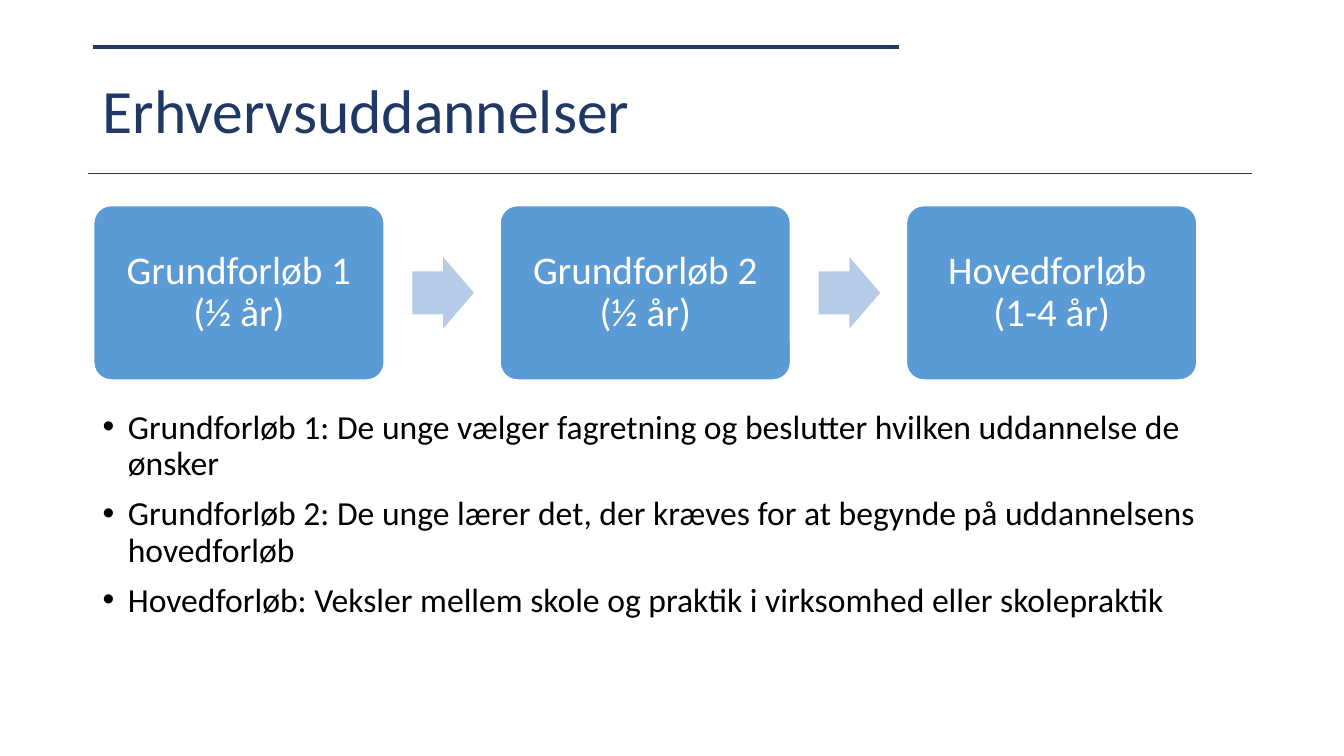
from pptx import Presentation
from pptx.dml.color import RGBColor
from pptx.enum.shapes import MSO_CONNECTOR, MSO_SHAPE
from pptx.enum.text import MSO_ANCHOR, PP_ALIGN
from pptx.oxml.ns import qn
from pptx.util import Inches, Pt
from lxml import etree

# Content
TITLE = "Erhvervsuddannelser"
STEPS = ["Grundforløb 1 (½ år)", "Grundforløb 2 (½ år)", "Hovedforløb \v(1-4 år)"]
BULLETS = [
    "Grundforløb 1: De unge vælger fagretning og beslutter hvilken uddannelse de ønsker",
    "Grundforløb 2: De unge lærer det, der kræves for at begynde på uddannelsens hovedforløb",
    "Hovedforløb: Veksler mellem skole og praktik i virksomhed eller skolepraktik",
]
RULES = [(0.92, 8.92, 0.47, 3), (0.87, 12.42, 1.72, 0.25)]  # left, right, y, points

THEME = {
    "font": "Calibri",
    "navy": RGBColor(0x20, 0x38, 0x64),
    "box": RGBColor(0x5B, 0x9B, 0xD5),
    "arrow": RGBColor(0xB5, 0xCB, 0xE7),
    "white": RGBColor(0xFF, 0xFF, 0xFF),
    "black": RGBColor(0, 0, 0),
    "title": 44, "step": 28, "body": 24,
}

# Layout in inches
LEFT, WIDTH = 0.92, 11.5
STEP_X, STEP_Y, STEP_W, STEP_H, PITCH = 0.93, 2.04, 2.88, 1.73, 4.03
ARROW_W, ARROW_H, ARROW_GAP = 0.61, 0.71, 0.28
STEP_INSET = 0.17

prs = Presentation()
prs.slide_width, prs.slide_height = Inches(13.33), Inches(7.5)
s = prs.slides.add_slide(prs.slide_layouts[6])


def add_text(p, text, size, color):
    p.line_spacing = 0.9
    for i, part in enumerate(text.split("\v")):
        if i:
            p.add_line_break()
        r = p.add_run()
        r.text = part
        r.font.name, r.font.size = THEME["font"], Pt(THEME[size])
        r.font.color.rgb = THEME[color]


def add_box(top, height, anchor):
    sp = s.shapes.add_textbox(Inches(LEFT), Inches(top), Inches(WIDTH), Inches(height))
    tf = sp.text_frame
    tf.word_wrap, tf.vertical_anchor = True, anchor
    return tf


def add_filled(kind, x, y, w, h, color, adjustments):
    sp = s.shapes.add_shape(kind, Inches(x), Inches(y), Inches(w), Inches(h))
    sp.shadow.inherit = False
    sp.fill.solid()
    sp.fill.fore_color.rgb = THEME[color]
    sp.line.fill.background()
    for i, value in enumerate(adjustments):
        sp.adjustments[i] = value
    return sp


# Rules above and below the title
for left, right, y, weight in RULES:
    rule = s.shapes.add_connector(
        MSO_CONNECTOR.STRAIGHT, Inches(left), Inches(y), Inches(right), Inches(y))
    rule.line.color.rgb, rule.line.width = THEME["navy"], Pt(weight)
    etree.SubElement(rule._element.spPr, qn("a:effectLst"))

# Title
add_text(add_box(0.4, 1.45, MSO_ANCHOR.MIDDLE).paragraphs[0], TITLE, "title", "navy")

# Process steps with an arrow in each gap
for i, step in enumerate(STEPS):
    x = STEP_X + i * PITCH
    sp = add_filled(MSO_SHAPE.ROUNDED_RECTANGLE, x, STEP_Y, STEP_W, STEP_H, "box", [0.1])
    sp.line.color.rgb, sp.line.width = THEME["white"], Pt(1)
    tf = sp.text_frame
    tf.word_wrap, tf.vertical_anchor = True, MSO_ANCHOR.MIDDLE
    tf.margin_left = tf.margin_right = tf.margin_top = tf.margin_bottom = Inches(STEP_INSET)
    p = tf.paragraphs[0]
    p.alignment = PP_ALIGN.CENTER
    add_text(p, step, "step", "white")
    if i < len(STEPS) - 1:
        add_filled(MSO_SHAPE.RIGHT_ARROW, x + STEP_W + ARROW_GAP,
                   STEP_Y + (STEP_H - ARROW_H) / 2, ARROW_W, ARROW_H, "arrow", [0.6, 0.5])

# Bullets
tf = add_box(4.02, 2.74, MSO_ANCHOR.TOP)
for i, bullet in enumerate(BULLETS):
    p = tf.add_paragraph() if i else tf.paragraphs[0]
    add_text(p, bullet, "body", "black")
    p.space_before = Pt(10 if i else 0)
    pPr = p._p.get_or_add_pPr()
    pPr.set("marL", str(Inches(0.25)))
    pPr.set("indent", str(-Inches(0.25)))
    etree.SubElement(pPr, qn("a:buFont")).set("typeface", "Arial")
    etree.SubElement(pPr, qn("a:buChar")).set("char", "•")

prs.save("out.pptx")
